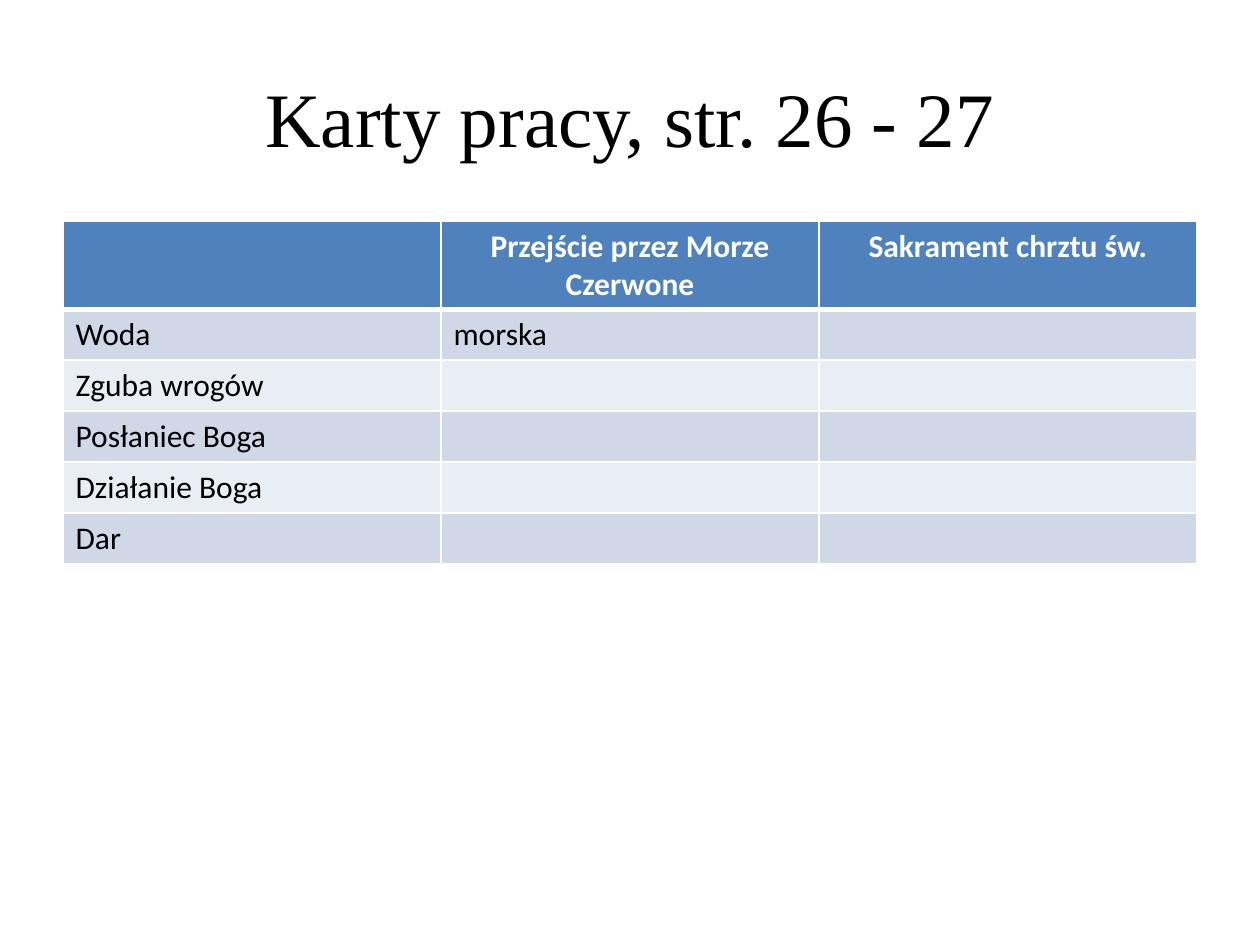
"""Build a worksheet slide comparing the Red Sea crossing with baptism."""
from dataclasses import dataclass

from lxml import etree
from pptx import Presentation
from pptx.dml.color import RGBColor
from pptx.enum.text import MSO_ANCHOR, PP_ALIGN
from pptx.oxml.ns import qn
from pptx.slide import Slide
from pptx.table import _Cell
from pptx.util import Emu, Pt

CENTER, LEFT = PP_ALIGN.CENTER, PP_ALIGN.LEFT
MIDDLE = MSO_ANCHOR.MIDDLE

COLORS = {
    "header": "4F81BD",
    "odd_band": "D0D8E8",
    "even_band": "E9EDF4",
    "white": "FFFFFF",
    "black": "000000",
}
EMU_PER_PX = 914400 / 126
MARGIN, CONTENT_WIDTH = 63, 1134
TITLE_TOP, TITLE_HEIGHT = 38, 157
TABLE_TOP, HEADER_HEIGHT, ROW_HEIGHT = 221, 88, 51
THIN, THICK = 1, 3

TITLE = "Karty pracy, str. 26 - 27"
ROWS = [
    ("", "Przejście przez Morze Czerwone", "Sakrament chrztu św."),
    ("Woda", "morska", ""),
    ("Zguba wrogów", "", ""),
    ("Posłaniec Boga", "", ""),
    ("Działanie Boga", "", ""),
    ("Dar", "", ""),
]


@dataclass(frozen=True)
class CellStyle:
    fill: str
    ink: str
    bold: bool
    align: PP_ALIGN
    top: int
    bottom: int


HEADER = CellStyle("header", "white", True, CENTER, THIN, THICK)
FIRST_ROW = CellStyle("odd_band", "black", False, LEFT, THICK, THIN)
ODD_ROW = CellStyle("odd_band", "black", False, LEFT, THIN, THIN)
EVEN_ROW = CellStyle("even_band", "black", False, LEFT, THIN, THIN)
ROW_STYLES = [HEADER, FIRST_ROW, EVEN_ROW, ODD_ROW, EVEN_ROW, ODD_ROW]


def px(length: int) -> Emu:
    return Emu(round(length * EMU_PER_PX))


def rgb(name: str) -> RGBColor:
    return RGBColor.from_string(COLORS[name])


def add_title(slide: Slide) -> None:
    title = slide.shapes.add_textbox(
        px(MARGIN), px(TITLE_TOP), px(CONTENT_WIDTH), px(TITLE_HEIGHT)
    )
    frame = title.text_frame
    frame.word_wrap = True
    frame.vertical_anchor = MIDDLE
    heading = frame.paragraphs[0]
    heading.text = TITLE
    heading.alignment = CENTER
    heading.font.name = "Times New Roman"
    heading.font.size = Pt(44)
    heading.font.color.rgb = rgb("black")


def add_borders(cell: _Cell, style: CellStyle) -> None:
    properties = cell._tc.get_or_add_tcPr()
    sides = {"lnL": THIN, "lnR": THIN, "lnT": style.top, "lnB": style.bottom}
    for side, width in sides.items():
        border = etree.SubElement(properties, qn(f"a:{side}"), w=str(Pt(width)))
        solid = etree.SubElement(border, qn("a:solidFill"))
        etree.SubElement(solid, qn("a:srgbClr"), val=COLORS["white"])


def fill_cell(cell: _Cell, wording: str, style: CellStyle) -> None:
    add_borders(cell, style)
    cell.fill.solid()
    cell.fill.fore_color.rgb = rgb(style.fill)
    entry = cell.text_frame.paragraphs[0]
    entry.text = wording
    entry.alignment = style.align
    entry.font.name = "Calibri"
    entry.font.size = Pt(18)
    entry.font.bold = style.bold
    entry.font.color.rgb = rgb(style.ink)


def add_worksheet(slide: Slide) -> None:
    body_count = len(ROWS) - 1
    worksheet = slide.shapes.add_table(
        len(ROWS), len(ROWS[0]), px(MARGIN), px(TABLE_TOP),
        px(CONTENT_WIDTH), px(HEADER_HEIGHT + body_count * ROW_HEIGHT),
    ).table
    heights = [HEADER_HEIGHT] + [ROW_HEIGHT] * body_count
    for row, height, entries, style in zip(worksheet.rows, heights, ROWS, ROW_STYLES):
        row.height = px(height)
        for cell, wording in zip(row.cells, entries):
            fill_cell(cell, wording, style)


def main() -> None:
    presentation = Presentation()
    presentation.slide_width, presentation.slide_height = px(1260), px(945)
    slide = presentation.slides.add_slide(presentation.slide_layouts[6])
    add_title(slide)
    add_worksheet(slide)
    presentation.save("out.pptx")


if __name__ == "__main__":
    main()
